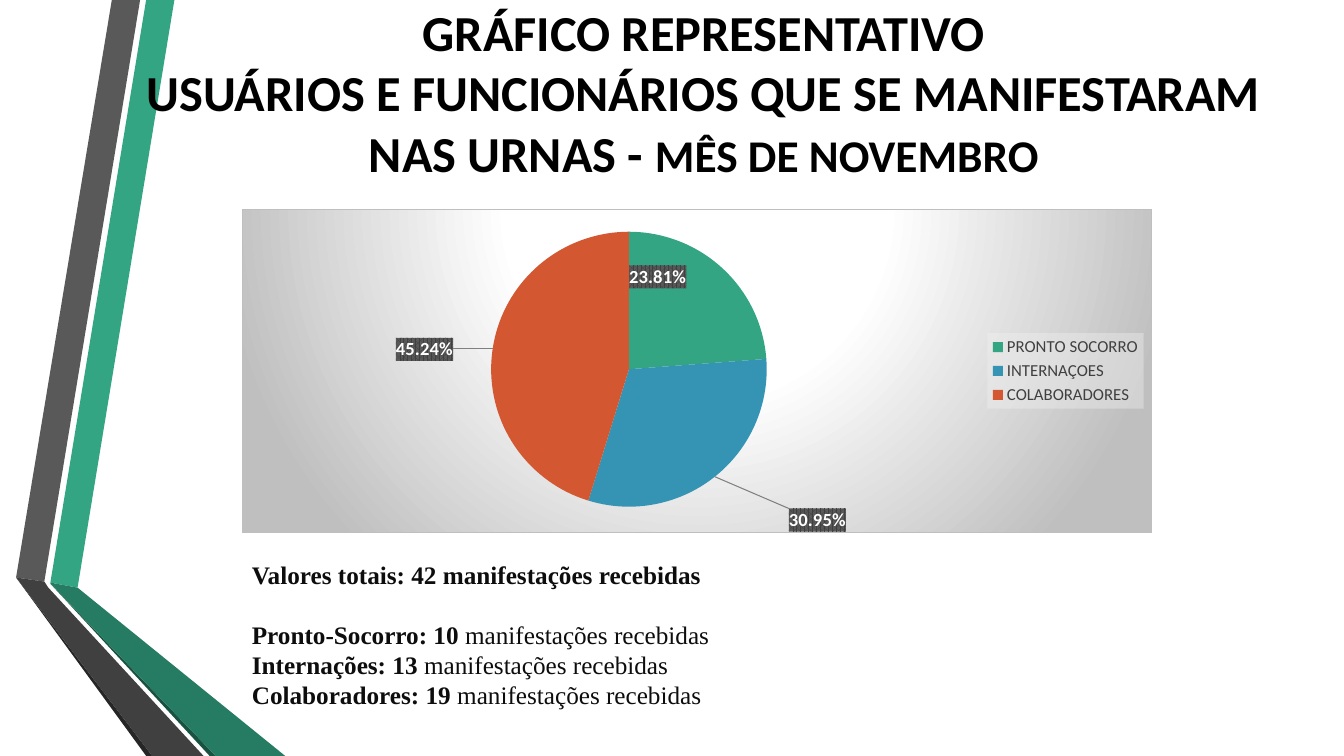
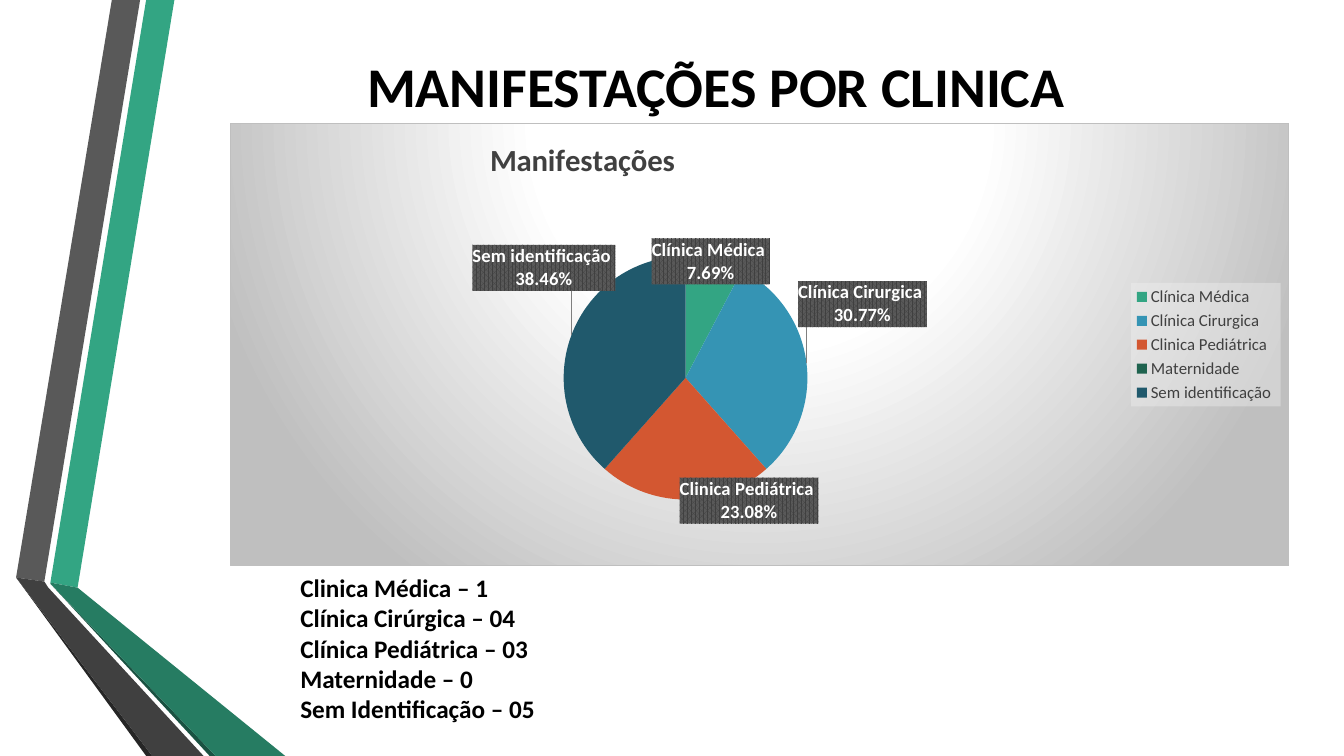
from dataclasses import dataclass

from pptx import Presentation
from pptx import util as u
from pptx.chart.data import CategoryChartData
from pptx.dml.color import RGBColor
from pptx.enum import chart as charts, text
from pptx.oxml import parse_xml
from pptx.oxml.ns import nsdecls, qn


@dataclass(frozen=True)
class Theme:
    sans: str = "Calibri"
    serif: str = "Times New Roman"
    black: str = "000000"
    ink: str = "0D0D0D"
    grey: str = "404040"
    light_grey: str = "BFBFBF"
    white: str = "FFFFFF"
    slices: tuple = ("33A583", "3594B4", "D35731", "1F634F", "20596C")
    body_size: float = 18
    chart_title_size: float = 22
    label_size: float = 13.3
    legend_size: float = 12
    chart_size: float = 10


THEME = Theme()

# Side ribbons: fill and outline in inches
RIBBONS = (
    ("33A583", [(0.5, 5.78), (0.77, 5.83), (1.73, 0), (1.45, 0)]),
    ("595959", [(1.39, 0), (1.11, 0), (0.16, 5.73), (0.44, 5.77)]),
    ("262626", [(0.16, 5.73), (1.45, 7.5), (1.51, 7.5)]),
    ("1A5242", [(0.5, 5.79), (2.08, 7.5), (2.14, 7.5)]),
    ("267C62", [(0.5, 5.79), (2.14, 7.5), (2.83, 7.5), (0.77, 5.83), (0.5, 5.78)]),
    ("404040", [(2.02, 7.5), (0.48, 5.83), (0.44, 5.77), (0.16, 5.73), (1.51, 7.5)]),
)


# Formatting helpers
def set_font(font, color, **values):
    for name, value in values.items():
        setattr(font, name, value)
    font.color.rgb = RGBColor.from_string(color)


def chart_xml(tag, content):
    return parse_xml(f'<c:{tag} {nsdecls("c", "a")}>{content}</c:{tag}>')


def solid(color, inner=""):
    return f'<a:solidFill><a:srgbClr val="{color}">{inner}</a:srgbClr></a:solidFill>'


def manual_layout(**values):
    return "<c:manualLayout>" + "".join(
        f'<c:{name} val="{value}"/>' for name, value in values.items()
    ) + "</c:manualLayout>"


def replace_layout(parent, index, **values):
    for old in parent.findall(qn("c:layout")):
        parent.remove(old)
    parent.insert(index, chart_xml("layout", manual_layout(**values)))


# Shared background, moved into the layout so that every slide shows it
def add_ribbons(slide, layout):
    for color, outline in RIBBONS:
        points = [(u.Inches(x), u.Inches(y)) for x, y in outline]
        builder = slide.shapes.build_freeform(*points[0])
        builder.add_line_segments(points[1:], close=True)
        shape = builder.convert_to_shape()
        shape.shadow.inherit = False
        shape.fill.solid()
        shape.fill.fore_color.rgb = RGBColor.from_string(color)
        shape.line.fill.background()
        layout.shapes.element.append(shape.element)


# Text: each title line is a list of (text, size) runs
def place_title(slide, box, lines, bottom_margin=0.05):
    title = slide.shapes.title
    title.left, title.top, title.width, title.height = map(u.Inches, box)
    frame = title.text_frame
    frame_format = {
        "word_wrap": True,
        "auto_size": text.MSO_AUTO_SIZE.NONE,
        "vertical_anchor": text.MSO_ANCHOR.MIDDLE,
        "margin_top": u.Inches(0.05),
        "margin_bottom": u.Inches(bottom_margin),
    }
    for name, value in frame_format.items():
        setattr(frame, name, value)
    paragraph = frame.paragraphs[0]
    paragraph.alignment = text.PP_ALIGN.CENTER
    for number, runs in enumerate(lines):
        if number:
            paragraph.add_line_break()
        for content, size in runs:
            run = paragraph.add_run()
            run.text = content
            set_font(run.font, THEME.black, name=THEME.sans, size=u.Pt(size), bold=True)


def add_body(slide, box, lines, font, color, alignment=text.PP_ALIGN.LEFT):
    frame = slide.shapes.add_textbox(*map(u.Inches, box)).text_frame
    frame.word_wrap = True
    for number, (strong, plain) in enumerate(lines):
        paragraph = frame.add_paragraph() if number else frame.paragraphs[0]
        paragraph.alignment = alignment
        for content, bold in ((strong, True), (plain, False)):
            if content:
                run = paragraph.add_run()
                run.text = content
                set_font(run.font, color, name=font, size=u.Pt(THEME.body_size), bold=bold)
    return frame


# Pie chart parts
def label_format(show_category):
    """Number format, patterned box, font and contents of a slice label."""
    shows = {"LegendKey": 0, "Val": 0, "CatName": int(show_category),
             "SerName": 0, "Percent": 1, "BubbleSize": 0}
    flags = "".join(f'<c:show{name} val="{value}"/>' for name, value in shows.items())
    return (
        '<c:numFmt formatCode="0.00%" sourceLinked="0"/>'
        '<c:spPr><a:pattFill prst="pct75">'
        f'<a:fgClr><a:srgbClr val="{THEME.grey}"/></a:fgClr>'
        '<a:bgClr><a:srgbClr val="595959"/></a:bgClr></a:pattFill>'
        "<a:ln><a:noFill/></a:ln></c:spPr>"
        '<c:txPr><a:bodyPr wrap="none"/><a:p><a:pPr>'
        f'<a:defRPr sz="{round(THEME.label_size * 100)}" b="1">{solid(THEME.white)}'
        f'<a:latin typeface="{THEME.sans}"/></a:defRPr></a:pPr>'
        '<a:endParaRPr lang="pt-BR"/></a:p></c:txPr>'
        f'<c:dLblPos val="ctr"/>{flags}<c:separator>\n</c:separator>'
    )


def label_size(width, height):
    """Room for a label, in chart fractions, so that its name stays on one line."""
    return (
        '<c:extLst><c:ext uri="{CE6537A1-D6FC-4f65-9D91-7224C49458BB}" '
        'xmlns:c15="http://schemas.microsoft.com/office/drawing/2012/chart">'
        f"<c15:layout>{manual_layout(w=width, h=height)}</c15:layout></c:ext></c:extLst>"
    )


def add_slice_labels(chart, offsets, show_category):
    """Shift each label from its slice centre; None hides the label."""
    common = label_format(show_category)
    size = label_size(0.15, 0.11) if show_category else ""
    labels = ""
    for index, offset in enumerate(offsets):
        if offset is None:
            content = '<c:delete val="1"/>'
        else:
            layout = manual_layout(x=offset[0], y=offset[1])
            content = f"<c:layout>{layout}</c:layout>{common}{size}"
        labels += f'<c:dLbl><c:idx val="{index}"/>{content}</c:dLbl>'
    leaders = (
        '<c:showLeaderLines val="1"/><c:leaderLines><c:spPr>'
        f'<a:ln w="9525">{solid("7F7F7F")}</a:ln></c:spPr></c:leaderLines>'
    )
    categories = next(chart.element.iter(qn("c:cat")))
    categories.addprevious(chart_xml("dLbls", labels + common + leaders))


def style_chart_area(chart):
    stops = "".join(
        f'<a:gs pos="{position}000"><a:srgbClr val="{color}"/></a:gs>'
        for position, color in ((0, THEME.white), (39, THEME.white), (100, THEME.light_grey))
    )
    area = chart_xml(
        "spPr",
        f'<a:gradFill><a:gsLst>{stops}</a:gsLst><a:path path="circle">'
        '<a:fillToRect l="50000" t="-80000" r="50000" b="180000"/></a:path></a:gradFill>'
        f'<a:ln w="9525">{solid(THEME.light_grey)}</a:ln>',
    )
    chart.element.find(qn("c:chart")).addnext(area)


def add_legend(chart):
    chart.has_legend = True
    chart.legend.position = charts.XL_LEGEND_POSITION.RIGHT
    chart.legend.include_in_layout = False
    set_font(chart.legend.font, THEME.grey, name=THEME.sans, size=u.Pt(THEME.legend_size))
    legend = next(chart.element.iter(qn("c:legend")))
    fill = solid("F2F2F2", '<a:alpha val="39000"/>')
    legend.find(qn("c:txPr")).addprevious(chart_xml("spPr", fill))


def add_chart_title(chart, title, left, top):
    chart.has_title = True
    frame = chart.chart_title.text_frame
    frame.text = title
    set_font(frame.paragraphs[0].runs[0].font, THEME.grey, name=THEME.sans,
             size=u.Pt(THEME.chart_title_size), bold=True)
    element = next(chart.element.iter(qn("c:title")))
    replace_layout(element, 1, xMode="edge", yMode="edge", x=left, y=top)


def add_pie(slide, box, name, slices, plot_box, show_category=False):
    """slices holds (category, value, label offset); plot_box is in chart fractions."""
    categories, values, offsets = zip(*slices)
    data = CategoryChartData()
    data.categories = categories
    data.add_series(name, values)
    chart = slide.shapes.add_chart(
        charts.XL_CHART_TYPE.PIE, *map(u.Inches, box), data).chart
    chart.has_title = False
    set_font(chart.font, THEME.black, name=THEME.sans, size=u.Pt(THEME.chart_size))
    plot = chart.plots[0]
    plot.vary_by_categories = True
    for index, color in enumerate(THEME.slices[:len(slices)]):
        fill = plot.series[0].points[index].format.fill
        fill.solid()
        fill.fore_color.rgb = RGBColor.from_string(color)
    add_slice_labels(chart, offsets, show_category)
    style_chart_area(chart)
    add_legend(chart)
    left, top, width, height = plot_box
    replace_layout(next(chart.element.iter(qn("c:plotArea"))), 0, layoutTarget="inner",
                   xMode="edge", yMode="edge", x=left, y=top, w=width, h=height)
    return chart


# Slides
def build_users_slide(slide):
    place_title(slide, (1.22, 0.28, 11.52, 1.79), [
        [("GRÁFICO REPRESENTATIVO", 36)],
        [("USUÁRIOS E FUNCIONÁRIOS QUE SE MANIFESTARAM NAS URNAS - ", 36),
         ("MÊS DE NOVEMBRO", 32.4)],
    ], bottom_margin=0.58)
    add_pie(slide, (2.4, 2.07, 9.03, 3.22), "Manifestações", [
        ("PRONTO SOCORRO", 23.81, (-0.02, -0.13)),
        ("INTERNAÇOES ", 30.95, (0.16, 0.3)),
        ("COLABORADORES", 45.24, (-0.15, -0.03)),
    ], plot_box=(0.27, 0.07, 0.31, 0.85))
    received = "manifestações recebidas"
    frame = add_body(slide, (2.4, 5.5, 9.03, 1.62), [
        ("Valores totais: 42 manifestações recebidas", ""),
        ("Pronto-Socorro: 10 ", received),
        ("Internações: 13 ", received),
        ("Colaboradores: 19 ", received),
    ], THEME.serif, THEME.ink, text.PP_ALIGN.JUSTIFY)
    frame.paragraphs[0].space_after = u.Pt(21)


def build_clinics_slide(slide):
    place_title(slide, (1.62, 0.27, 10.96, 1.15), [[("MANIFESTAÇÕES POR CLINICA", 40)]])
    chart = add_pie(slide, (2.28, 1.22, 10.51, 4.4), "Manifestações", [
        ("Clínica Médica ", 7.69, (0.01, -0.13)),
        ("Clínica Cirurgica ", 30.77, (0.11, -0.15)),
        ("Clinica Pediátrica ", 23.08, (0.06, 0.14)),
        ("Maternidade ", 0, None),
        ("Sem identificação ", 38.46, (-0.08, -0.2)),
    ], plot_box=(0.31, 0.3, 0.24, 0.55), show_category=True)
    add_chart_title(chart, "Manifestações", 0.24, 0.02)
    lines = ("Clinica Médica – 1", "Clínica Cirúrgica – 04", "Clínica Pediátrica – 03",
             "Maternidade – 0", "Sem Identificação – 05")
    add_body(slide, (2.88, 5.63, 8.44, 1.92), [(line, "") for line in lines],
             THEME.sans, THEME.black)


def main():
    presentation = Presentation()
    presentation.slide_width = u.Inches(13.33)
    presentation.slide_height = u.Inches(7.5)
    layout = presentation.slide_layouts.get_by_name("Title Only")
    users_slide, clinics_slide = (presentation.slides.add_slide(layout) for _ in range(2))
    add_ribbons(users_slide, layout)
    build_users_slide(users_slide)
    build_clinics_slide(clinics_slide)
    presentation.save("out.pptx")


if __name__ == "__main__":
    main()
